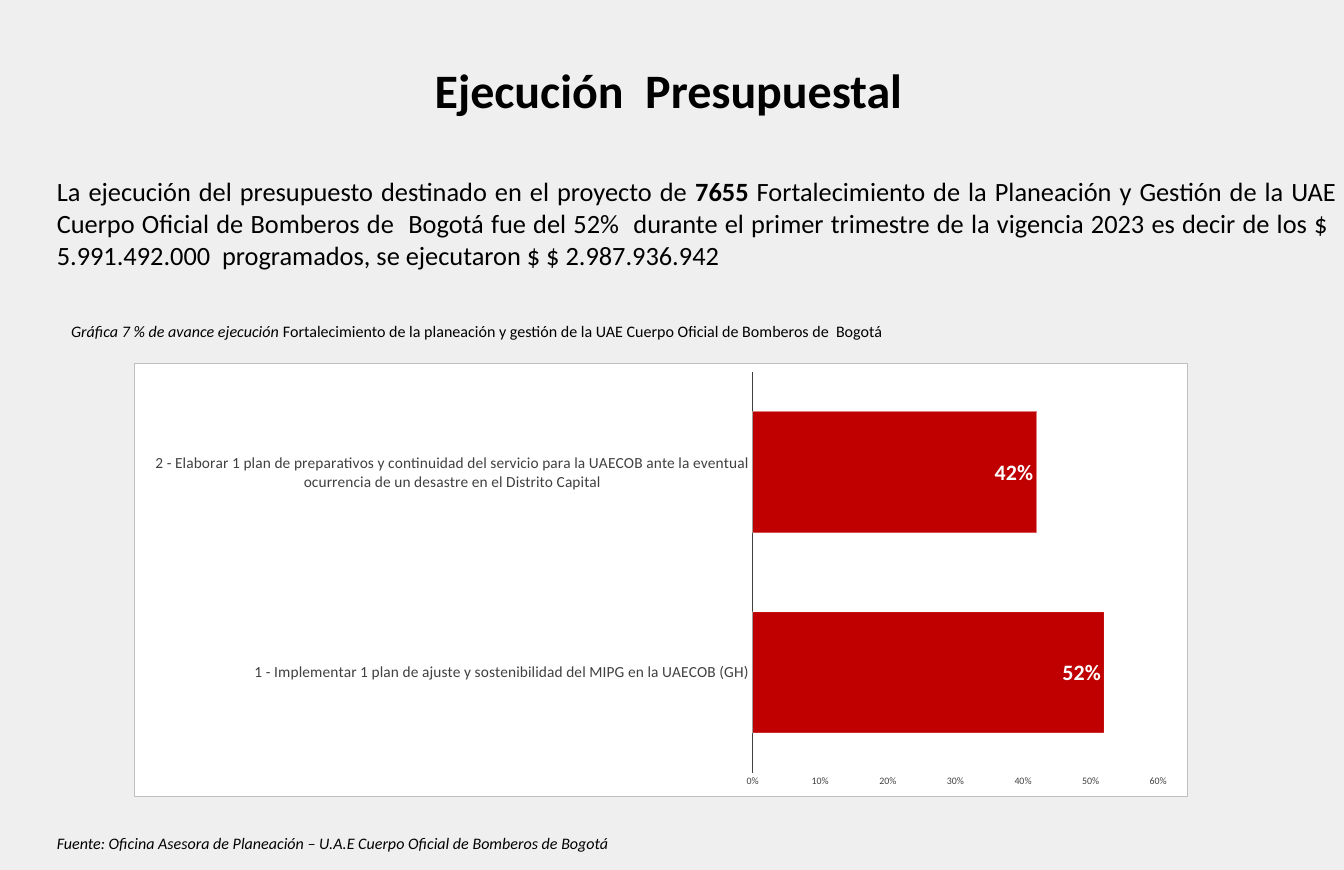
from dataclasses import dataclass

from pptx import Presentation
from pptx.chart.chart import Chart
from pptx.chart.data import CategoryChartData
from pptx.dml.color import RGBColor
from pptx.enum.chart import XL_CHART_TYPE, XL_LABEL_POSITION, XL_TICK_MARK
from pptx.enum.text import MSO_ANCHOR, PP_ALIGN
from pptx.oxml import parse_xml
from pptx.oxml.ns import nsdecls
from pptx.slide import Slide
from pptx.text.text import Font
from pptx.util import Inches, Pt

BACKGROUND = RGBColor(0xEF, 0xEF, 0xEF)
BLACK = RGBColor(0, 0, 0)
WHITE = RGBColor(0xFF, 0xFF, 0xFF)
RED = RGBColor(0xC0, 0, 0)
GREY = RGBColor(0x40, 0x40, 0x40)
BORDER = RGBColor(0xBF, 0xBF, 0xBF)

TITLE = "Ejecución  Presupuestal"
BUDGET = {
    "1 - Implementar 1 plan de ajuste y sostenibilidad del MIPG en la UAECOB (GH)": 0.52,
    "2 - Elaborar 1 plan de preparativos y continuidad del servicio para la UAECOB "
    "ante la eventual ocurrencia de un desastre en el Distrito Capital": 0.42,
}


@dataclass(frozen=True)
class Span:
    text: str
    bold: bool = False
    italic: bool = False


@dataclass(frozen=True)
class TextBlock:
    left: float
    top: float
    width: float
    height: float
    size: float
    spans: tuple[Span, ...]
    align: PP_ALIGN = PP_ALIGN.LEFT


TEXT_BLOCKS = (
    TextBlock(0.62, 2.17, 16.38, 1.31, 24, (
        Span("La ejecución del presupuesto destinado en el proyecto de"),
        Span(" 7655 ", bold=True),
        Span("Fortalecimiento de la Planeación y Gestión de la UAE Cuerpo Oficial de "
             "Bomberos de  Bogotá fue del 52%  durante el primer trimestre de la "
             "vigencia 2023 es decir de los $  5.991.492.000  programados, "
             "se ejecutaron $ $ 2.987.936.942"),
    ), PP_ALIGN.JUSTIFY),
    TextBlock(0.8, 4.01, 14.05, 0.35, 14.6, (
        Span("Gráfica 7 % de avance ejecución ", italic=True),
        Span("Fortalecimiento de la planeación y gestión de la UAE Cuerpo Oficial "
             "de Bomberos de  Bogotá"),
    )),
    TextBlock(0.62, 10.49, 9.44, 0.35, 14.6, (
        Span("Fuente: Oficina Asesora de Planeación – U.A.E Cuerpo Oficial de "
             "Bomberos de Bogotá", italic=True),
    )),
)


def style_font(font: Font, size: float, color: RGBColor,
               bold: bool = False, italic: bool = False) -> None:
    font.name = "Calibri"
    font.size = Pt(size)
    font.color.rgb = color
    font.bold = bold
    font.italic = italic


def add_title(page: Slide) -> None:
    title = page.shapes.title
    title.left, title.top = Inches(1.55), Inches(0.7)
    title.width, title.height = Inches(13.81), Inches(0.86)
    frame = title.text_frame
    frame.text = TITLE
    frame.vertical_anchor = MSO_ANCHOR.MIDDLE
    para = frame.paragraphs[0]
    para.alignment = PP_ALIGN.CENTER
    style_font(para.runs[0].font, 43.7, BLACK, bold=True)


def add_text(page: Slide, block: TextBlock) -> None:
    box = page.shapes.add_textbox(Inches(block.left), Inches(block.top),
                                  Inches(block.width), Inches(block.height))
    box.text_frame.word_wrap = True
    para = box.text_frame.paragraphs[0]
    para.alignment = block.align
    for span in block.spans:
        run = para.add_run()
        run.text = span.text
        style_font(run.font, block.size, BLACK, span.bold, span.italic)


def frame_chart(chart: Chart) -> None:
    area = chart.element.xpath("c:chart")[0]
    area.addnext(parse_xml(
        f'<c:spPr {nsdecls("c", "a")}>'
        f'<a:solidFill><a:srgbClr val="{WHITE}"/></a:solidFill>'
        f'<a:ln w="{Pt(0.75)}"><a:solidFill><a:srgbClr val="{BORDER}"/></a:solidFill></a:ln>'
        '</c:spPr>'))
    plot_area = area.xpath("c:plotArea")[0]
    for layout in plot_area.xpath("c:layout"):
        plot_area.remove(layout)
    plot_area.insert(0, parse_xml(
        f'<c:layout {nsdecls("c")}><c:manualLayout><c:layoutTarget val="inner"/>'
        '<c:xMode val="edge"/><c:yMode val="edge"/>'
        '<c:x val="0.587"/><c:y val="0.02"/><c:w val="0.385"/><c:h val="0.924"/>'
        '</c:manualLayout></c:layout>'))
    outline = chart.element.xpath(".//c:ser/c:spPr/a:ln//a:srgbClr")[0]
    outline.append(parse_xml(f'<a:alpha {nsdecls("a")} val="50000"/>'))


def add_budget_chart(page: Slide) -> None:
    data = CategoryChartData(number_format="0%")
    data.categories = list(BUDGET)
    data.add_series("Series 1", list(BUDGET.values()))
    chart = page.shapes.add_chart(XL_CHART_TYPE.BAR_CLUSTERED, Inches(1.69), Inches(4.59),
                                  Inches(13.34), Inches(5.49), data).chart
    chart.has_title = False
    chart.has_legend = False
    style_font(chart.font, 10, BLACK)

    for axis, size in ((chart.category_axis, 14), (chart.value_axis, 9)):
        axis.has_major_gridlines = False
        axis.major_tick_mark = XL_TICK_MARK.NONE
        axis.minor_tick_mark = XL_TICK_MARK.NONE
        style_font(axis.tick_labels.font, size, GREY)
    chart.category_axis.format.line.color.rgb = GREY
    chart.category_axis.format.line.width = Pt(1.5)
    value_axis = chart.value_axis
    value_axis.format.line.fill.background()
    value_axis.minimum_scale = 0
    value_axis.maximum_scale = 0.6
    value_axis.major_unit = 0.1
    value_axis.tick_labels.number_format = "0%"
    value_axis.tick_labels.number_format_is_linked = False

    plot = chart.plots[0]
    plot.gap_width = 65
    plot.vary_by_categories = False
    bars = plot.series[0]
    bars.format.fill.solid()
    bars.format.fill.fore_color.rgb = RED
    bars.format.line.color.rgb = WHITE
    bars.format.line.width = Pt(0.75)
    labels = bars.data_labels
    labels.show_value = True
    labels.position = XL_LABEL_POSITION.INSIDE_END
    labels.number_format = "0%"
    labels.number_format_is_linked = False
    style_font(labels.font, 20, WHITE, bold=True)
    frame_chart(chart)


def main() -> None:
    deck = Presentation()
    deck.slide_width, deck.slide_height = Inches(17), Inches(11)
    page = deck.slides.add_slide(deck.slide_layouts[5])
    page.background.fill.solid()
    page.background.fill.fore_color.rgb = BACKGROUND
    add_title(page)
    for block in TEXT_BLOCKS:
        add_text(page, block)
    add_budget_chart(page)
    deck.save("out.pptx")


if __name__ == "__main__":
    main()
